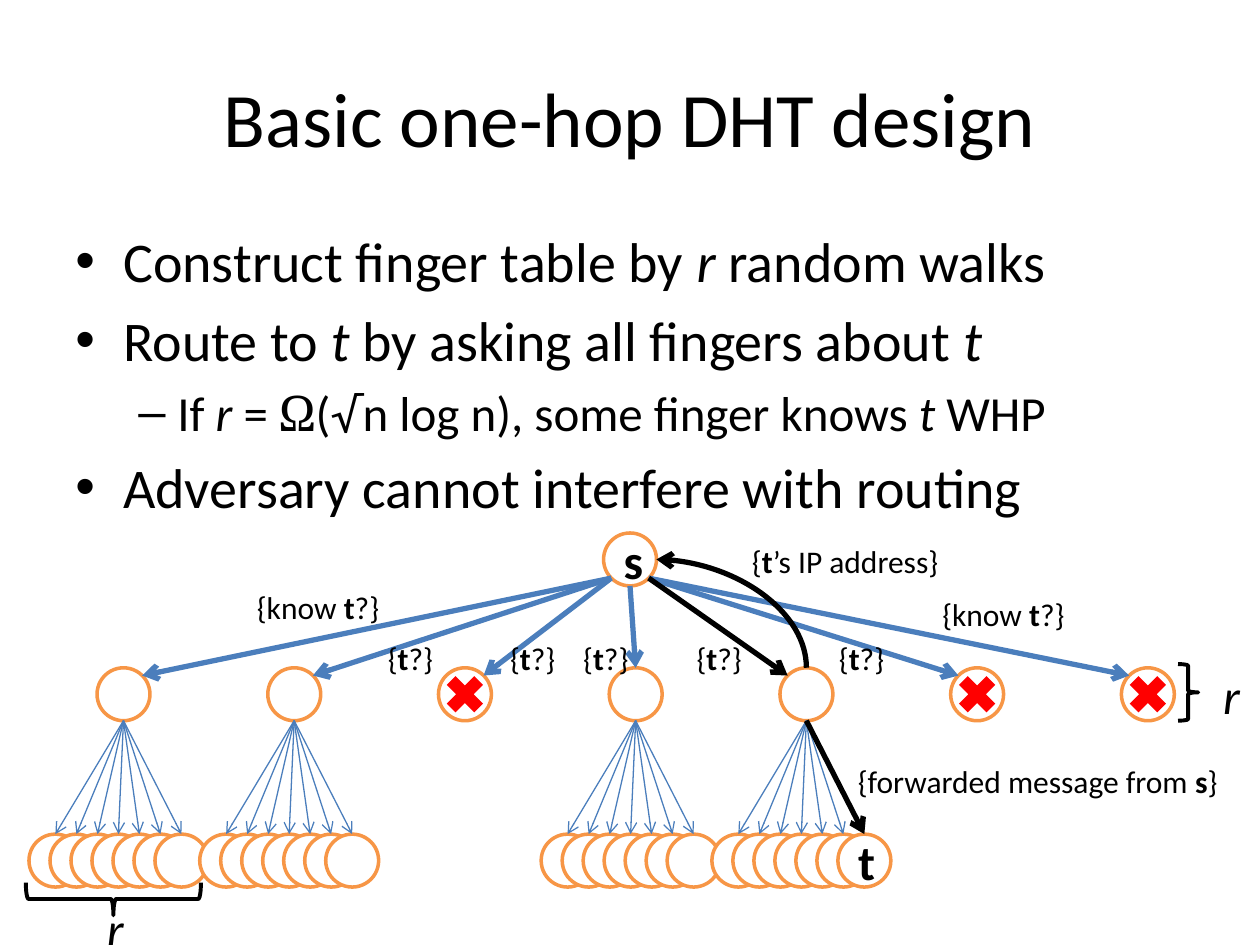
from math import sqrt

from lxml import etree
from pptx import Presentation
from pptx.dml.color import RGBColor
from pptx.enum.shapes import MSO_CONNECTOR, MSO_SHAPE
from pptx.enum.text import MSO_ANCHOR, MSO_AUTO_SIZE, PP_ALIGN
from pptx.oxml.ns import qn
from pptx.util import Inches, Pt

OVAL, CROSS, BRACE = MSO_SHAPE.OVAL, MSO_SHAPE.MATH_MULTIPLY, MSO_SHAPE.RIGHT_BRACE
STRAIGHT, CURVE = MSO_CONNECTOR.STRAIGHT, MSO_CONNECTOR.CURVE
CENTER, MIDDLE = PP_ALIGN.CENTER, MSO_ANCHOR.MIDDLE
FIT_SHAPE = MSO_AUTO_SIZE.SHAPE_TO_FIT_TEXT

BLACK = RGBColor(0x00, 0x00, 0x00)
WHITE = RGBColor(0xFF, 0xFF, 0xFF)
ORANGE = RGBColor(0xF7, 0x96, 0x46)
BLUE = RGBColor(0x4B, 0x7E, 0xBC)
RED = RGBColor(0xFF, 0x00, 0x00)

PLAIN, BOLD, ITALIC, MATH = "plain", "bold", "italic", "math"

TITLE = [("Basic one-hop DHT design", PLAIN)]
BULLETS = [
    (0, [("Construct finger table by ", PLAIN), ("r", ITALIC), (" random walks", PLAIN)]),
    (0, [("Route to ", PLAIN), ("t", ITALIC), (" by asking all fingers about ", PLAIN),
         ("t", ITALIC)]),
    (1, [("If ", PLAIN), ("r", ITALIC), (" = ", PLAIN), ("Ω", MATH), ("(", PLAIN),
         ("√", MATH), ("n log n), some finger knows ", PLAIN), ("t", ITALIC),
         (" WHP", PLAIN)]),
    (0, [("Adversary cannot interfere with routing", PLAIN)]),
]
LEVELS = [("•", 32, 0.38, -0.38), ("–", 28, 0.81, -0.31)]

KNOW = [("{know ", PLAIN), ("t", BOLD), ("?}", PLAIN)]
ASK = [("{", PLAIN), ("t", BOLD), ("?}", PLAIN)]
REPLY = [("{", PLAIN), ("t", BOLD), ("’s IP address}", PLAIN)]
FORWARD = [("{forwarded message from ", PLAIN), ("s", BOLD), ("}", PLAIN)]
LABELS = [(1.94, 4.62, 1.18, KNOW), (7.38, 4.67, 1.18, KNOW)]
LABELS += [(x, 5.02, 0.56, ASK) for x in (2.98, 3.95, 4.53, 5.43, 6.56)]
LABELS += [(5.87, 4.25, 1.7, REPLY), (6.71, 6, 3.09, FORWARD)]
BRACES = [(9.35, 5.27, 0.16, 0.45, 0), (0.77, 6.44, 0.26, 1.39, 90)]
BRACE_LABELS = [(9.61, 5.23), (0.75, 7.08)]

COUNT = 7
RADIUS = 0.21
DIAG = RADIUS / sqrt(2)
SOURCE_X, SOURCE_Y = 5, 4.44
FINGER_Y, LEAF_Y = 5.51, 6.83
FINGER_XS = [0.98 + i * (9.11 - 0.98) / (COUNT - 1) for i in range(COUNT)]
ADVERSARIES = (2, 5, 6)
ROUTE_FINGER, TARGET_LEAF = 4, COUNT - 1

prs = Presentation()
prs.slide_width, prs.slide_height = Inches(10), Inches(7.5)
slide = prs.slides.add_slide(prs.slide_layouts[6])
shapes = slide.shapes


def write(p, runs, size):
    for text, style in runs:
        r = p.add_run()
        r.text = text
        r.font.size = Pt(size)
        r.font.name = "Cambria" if style == MATH else "Calibri"
        r.font.color.rgb = BLACK
        r.font.bold = style == BOLD
        r.font.italic = style == ITALIC


def text_box(x, y, w, h, wrap=True):
    tf = shapes.add_textbox(Inches(x), Inches(y), Inches(w), Inches(h)).text_frame
    tf.word_wrap = wrap
    return tf


def label(x, y, w, h, runs, size, wrap):
    tf = text_box(x, y, w, h, wrap)
    tf.auto_size = FIT_SHAPE
    write(tf.paragraphs[0], runs, size)


def shape(kind, x, y, w, h, fill=None, line=None, width=2):
    sp = shapes.add_shape(kind, Inches(x), Inches(y), Inches(w), Inches(h))
    sp.shadow.inherit = False
    for part, color in ((sp.fill, fill), (sp.line.fill, line)):
        if color is None:
            part.background()
        else:
            part.solid()
            part.fore_color.rgb = color
    if line is not None:
        sp.line.width = Pt(width)
    return sp


def node(cx, cy, name=None):
    sp = shape(OVAL, cx - RADIUS, cy - RADIUS, 2 * RADIUS, 2 * RADIUS, WHITE, ORANGE)
    if name:
        tf = sp.text_frame
        tf.vertical_anchor = MIDDLE
        tf.paragraphs[0].alignment = CENTER
        write(tf.paragraphs[0], [(name, BOLD)], 28)


def arrow(start, end, color, width, kind=STRAIGHT, tip="a:tailEnd"):
    line = shapes.add_connector(kind, *(Inches(v) for v in start + end))
    line.line.color.rgb = color
    line.line.width = Pt(width)
    props = line._element.spPr
    etree.SubElement(props.find(qn("a:ln")), qn(tip), type="arrow")
    etree.SubElement(props, qn("a:effectLst"))
    return line


def add_bullet(p, level):
    char, size, margin, indent = LEVELS[level]
    props = p._p.get_or_add_pPr()
    props.set("marL", str(Inches(margin)))
    props.set("indent", str(Inches(indent)))
    before = etree.SubElement(props, qn("a:spcBef"))
    etree.SubElement(before, qn("a:spcPct"), val="20000")
    etree.SubElement(props, qn("a:buFont"), typeface="Arial")
    etree.SubElement(props, qn("a:buChar"), char=char)
    return size


tf = text_box(0.5, 0.3, 9, 1.25)
tf.vertical_anchor = MIDDLE
tf.paragraphs[0].alignment = CENTER
write(tf.paragraphs[0], TITLE, 44)

tf = text_box(0.5, 1.75, 9, 2.46)
for i, (level, runs) in enumerate(BULLETS):
    p = tf.add_paragraph() if i else tf.paragraphs[0]
    p.level = level
    write(p, runs, add_bullet(p, level))

node(SOURCE_X, SOURCE_Y, "s")
for i, x in enumerate(FINGER_XS):
    node(x, FINGER_Y)
    if i in ADVERSARIES:
        shape(CROSS, x - RADIUS, FINGER_Y - RADIUS, 2 * RADIUS, 2 * RADIUS, RED)
        continue
    leaf_xs = [x - 0.54 + k / 6 for k in range(COUNT)]
    for k, leaf_x in enumerate(leaf_xs):
        node(leaf_x, LEAF_Y, "t" if (i, k) == (ROUTE_FINGER, TARGET_LEAF) else None)
    for k, leaf_x in enumerate(leaf_xs):
        on_route = (i, k) == (ROUTE_FINGER, TARGET_LEAF)
        arrow((x, FINGER_Y + RADIUS), (leaf_x, LEAF_Y - RADIUS),
              BLACK if on_route else BLUE, 3 if on_route else 0.75)

middle = COUNT // 2
for i in sorted(range(COUNT), key=lambda n: n == ROUTE_FINGER):
    x = FINGER_XS[i]
    side = (i > middle) - (i < middle)
    dx, dy = (side * DIAG, DIAG) if side else (0, RADIUS)
    arrow((SOURCE_X + dx, SOURCE_Y + dy), (x - dx, FINGER_Y - dy),
          BLACK if i == ROUTE_FINGER else BLUE, 3)

for x, y, w, h, angle in BRACES:
    shape(BRACE, x, y, w, h, line=BLACK, width=2.25).rotation = angle
for x, y in BRACE_LABELS:
    label(x, y, 0.39, 0.57, [("r", ITALIC)], 28, True)
for x, y, w, runs in LABELS:
    label(x, y, w, 0.4, runs, 18, False)

reply = arrow((SOURCE_X + RADIUS, SOURCE_Y),
              (FINGER_XS[ROUTE_FINGER], FINGER_Y - RADIUS), BLACK, 3, CURVE, "a:headEnd")
reply._element.spPr.find(qn("a:prstGeom")).set("prst", "curvedConnector2")

prs.save("out.pptx")
